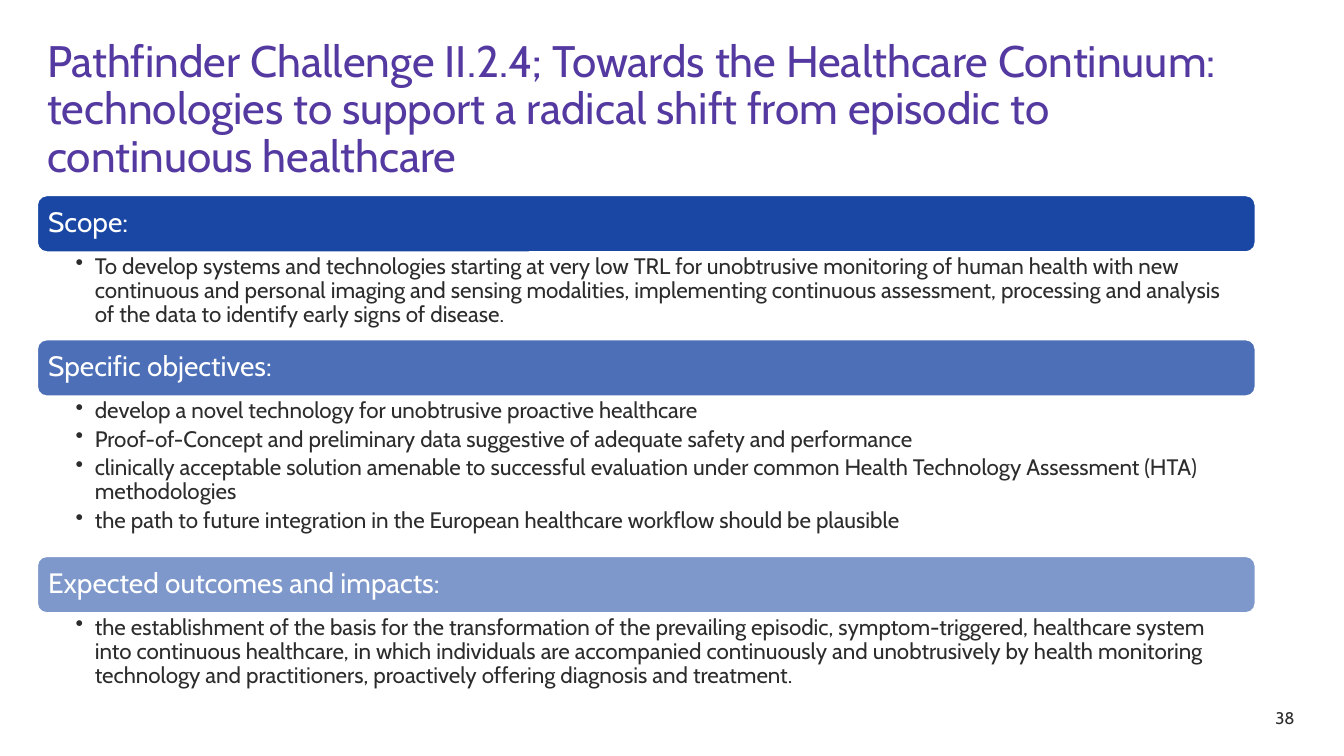
from pptx import Presentation
from pptx.dml.color import RGBColor
from pptx.enum.shapes import MSO_SHAPE
from pptx.enum.text import MSO_ANCHOR, PP_ALIGN
from pptx.oxml.ns import qn
from pptx.util import Inches, Pt
from lxml.etree import SubElement

WIDTH, HEIGHT = 13.33, 7.5
LEFT, CONTENT_WIDTH = 0.37, 12.08
HEADER_HEIGHT, SECTIONS_TOP = 0.56, 1.94
TITLE_FORMAT = {"size": Pt(31.5), "name": "Cabin"}
HEADER_FORMAT = {"size": Pt(20), "name": "Cabin"}
BODY_FORMAT = {"size": Pt(16), "name": "Cabin"}
NUMBER_FORMAT = {"size": Pt(12), "name": "Cabin"}
BODY_INSETS = {"left": 0.38, "top": 0.03, "right": 0.16, "bottom": 0.03}
TITLE = (
    "Pathfinder Challenge II.2.4; Towards the Healthcare Continuum: technologies "
    "to support a radical shift from episodic to continuous healthcare"
)
SECTIONS = [
    ("Scope:", 90, 0.87, [
        "To develop systems and technologies starting at very low TRL for unobtrusive "
        "monitoring of human health with new continuous and personal imaging and sensing "
        "modalities, implementing continuous assessment, processing and analysis of the "
        "data to identify early signs of disease.",
    ]),
    ("Specific objectives:", 70, 1.59, [
        "develop a novel technology for unobtrusive proactive healthcare",
        "Proof-of-Concept and preliminary data suggestive of adequate safety and performance",
        "clinically acceptable solution amenable to successful evaluation under common "
        "Health Technology Assessment (HTA) methodologies",
        "the path to future integration in the European healthcare workflow should be plausible",
    ]),
    ("Expected outcomes and impacts:", 50, 0.87, [
        "the establishment of the basis for the transformation of the prevailing episodic, "
        "symptom-triggered, healthcare system into continuous healthcare, in which "
        "individuals are accompanied continuously and unobtrusively by health monitoring "
        "technology and practitioners, proactively offering diagnosis and treatment.",
    ]),
]


def color(hex_value):
    """Turn a hex string into a colour."""
    return RGBColor.from_string(hex_value)


def write_paragraph(paragraph, text, font_format, hex_value, line_spacing=0.9):
    """Write one left-aligned run with the given font values."""
    paragraph.alignment = PP_ALIGN.LEFT
    paragraph.line_spacing = line_spacing
    run = paragraph.add_run()
    run.text = text
    for name, value in font_format.items():
        setattr(run.font, name, value)
    run.font.color.rgb = color(hex_value)


def add_text_frame(slide, left, top, width, height):
    """Add a wrapping text box and return its frame."""
    textbox = slide.shapes.add_textbox(*map(Inches, (left, top, width, height)))
    textbox.text_frame.word_wrap = True
    return textbox.text_frame


def add_bullet(paragraph):
    """Give a paragraph a hanging round bullet."""
    properties = paragraph._p.get_or_add_pPr()
    properties.set("marL", str(Inches(0.19)))
    properties.set("indent", str(Inches(-0.19)))
    SubElement(properties, qn("a:buChar")).set("char", "•")


def add_header(slide, left, top, width, text, opacity):
    """Draw the rounded bar that names a section."""
    bar = slide.shapes.add_shape(
        MSO_SHAPE.ROUNDED_RECTANGLE, *map(Inches, (left, top, width, HEADER_HEIGHT))
    )
    bar.shadow.inherit = False
    bar.fill.solid()
    bar.fill.fore_color.rgb = color("003399")
    fill_color = bar.fill._xPr.find(qn("a:solidFill"))[0]
    SubElement(fill_color, qn("a:alpha")).set("val", str(opacity * 1000))
    bar.line.color.rgb = color("FFFFFF")
    bar.line.width = Pt(1)
    frame = bar.text_frame
    frame.word_wrap = True
    frame.vertical_anchor = MSO_ANCHOR.MIDDLE
    frame.margin_left = Inches(0.08)
    write_paragraph(frame.paragraphs[0], text, HEADER_FORMAT, "FFFFFF")


def add_body(slide, left, top, width, height, items):
    """Write the bulleted items of a section."""
    frame = add_text_frame(slide, left, top, width, height)
    for side, inset in BODY_INSETS.items():
        setattr(frame, f"margin_{side}", Inches(inset))
    for index, item in enumerate(items):
        paragraph = frame.add_paragraph() if index else frame.paragraphs[0]
        write_paragraph(paragraph, item, BODY_FORMAT, "2C2C2C")
        paragraph.space_after = Pt(3.2)
        add_bullet(paragraph)


def add_sections(slide, left, top, width):
    """Stack the section bars and their bodies downwards."""
    for heading, opacity, body_height, items in SECTIONS:
        add_header(slide, left, top, width, heading, opacity)
        add_body(slide, left, top + HEADER_HEIGHT, width, body_height, items)
        top += HEADER_HEIGHT + body_height


def add_title(slide, left, top, width, height):
    """Write the slide title."""
    frame = add_text_frame(slide, left, top, width, height)
    write_paragraph(frame.paragraphs[0], TITLE, TITLE_FORMAT, "5439A1")


def add_page_number(slide, left, top, width, height):
    """Write the page number."""
    frame = add_text_frame(slide, left, top, width, height)
    write_paragraph(frame.paragraphs[0], "38", NUMBER_FORMAT, "2C2C2C", 1.0)


def main():
    """Build and save the presentation."""
    presentation = Presentation()
    presentation.slide_width = Inches(WIDTH)
    presentation.slide_height = Inches(HEIGHT)
    slide = presentation.slides.add_slide(presentation.slide_layouts[6])
    add_title(slide, LEFT, 0.34, CONTENT_WIDTH, 1.45)
    add_sections(slide, LEFT, SECTIONS_TOP, CONTENT_WIDTH)
    add_page_number(slide, 12.55, 6.97, WIDTH - 12.55, 0.4)
    presentation.save("out.pptx")


if __name__ == "__main__":
    main()
